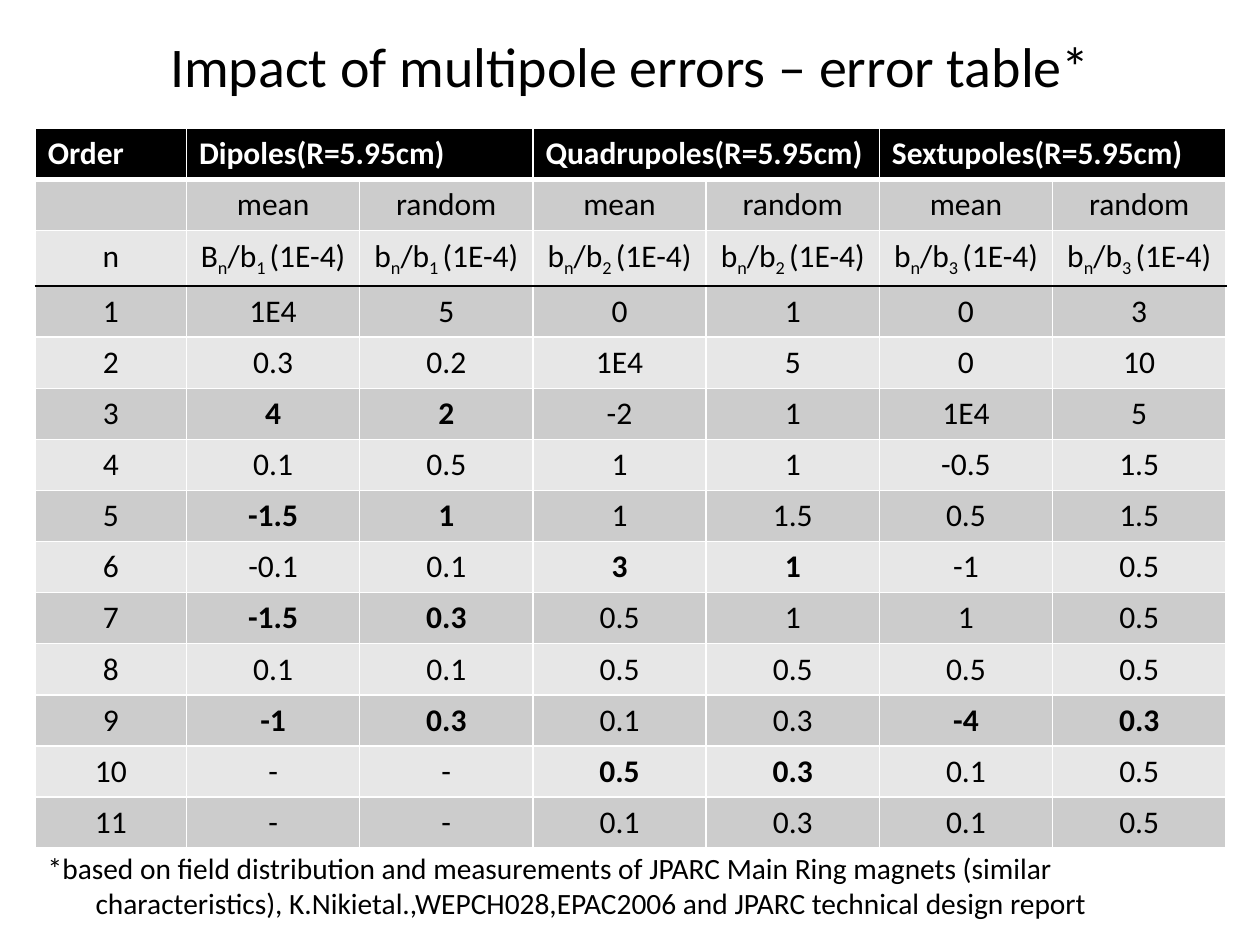
from lxml import etree
from pptx import Presentation
from pptx import util as u
from pptx.dml.color import RGBColor
from pptx.enum import text
from pptx.oxml.ns import qn

BLACK = RGBColor(0x00, 0x00, 0x00)
WHITE = RGBColor(0xFF, 0xFF, 0xFF)
DARK_BAND = RGBColor(0xCC, 0xCC, 0xCC)
LIGHT_BAND = RGBColor(0xE7, 0xE7, 0xE7)

# Shares of the slide's width and height
LEFT, WIDTH = 0.028, 0.945
TITLE_TOP, TITLE_HEIGHT = 0.015, 0.108
TABLE_TOP, TABLE_HEIGHT = 0.136, 0.757
NOTE_TOP, NOTE_HEIGHT = 0.893, 0.107
COLUMN_SHARES = [0.127] + [0.1455] * 6

TITLE = "Impact of multipole errors – error table*"
NOTE = ("*based on field distribution and measurements of JPARC Main Ring magnets "
        "(similar characteristics), K.Nikietal.,WEPCH028,EPAC2006 and JPARC "
        "technical design report")
MAGNETS = ["Dipoles", "Quadrupoles", "Sextupoles"]
UNIT_ROW = 2

# One line per order n, mean and random for each magnet; * marks a bold value
ERRORS = """
1E4 5 0 1 0 3
0.3 0.2 1E4 5 0 10
*4 *2 -2 1 1E4 5
0.1 0.5 1 1 -0.5 1.5
*-1.5 *1 1 1.5 0.5 1.5
-0.1 0.1 *3 *1 -1 0.5
*-1.5 *0.3 0.5 1 1 0.5
0.1 0.1 0.5 0.5 0.5 0.5
*-1 *0.3 0.1 0.3 *-4 *0.3
- - *0.5 *0.3 0.1 0.5
- - 0.1 0.3 0.1 0.5
"""


class SlideBuilder:
    font_name = "Calibri"

    def __init__(self, deck):
        self.deck = deck
        self.page = deck.slides.add_slide(deck.slide_layouts[5])

    def area(self, top, height):
        """Left, top, width and height of a full-width strip."""
        wide, high = self.deck.slide_width, self.deck.slide_height
        return (int(LEFT * wide), int(top * high),
                int(WIDTH * wide), int(height * high))

    def fill_paragraph(self, para, spans, size, color=BLACK, bold=False, align=None):
        """Fill a paragraph with (words, is_subscript) spans."""
        para.alignment = align
        font = para.font
        font.name, font.size, font.bold = self.font_name, u.Pt(size), bold
        font.color.rgb = color
        for words, is_subscript in spans:
            span = para.add_run()
            span.text = words
            if is_subscript:
                span.font._element.set("baseline", "-25000")

    def title(self, words):
        box = self.page.shapes.title
        box.left, box.top, box.width, box.height = self.area(TITLE_TOP, TITLE_HEIGHT)
        box.text_frame.vertical_anchor = text.MSO_ANCHOR.MIDDLE
        self.fill_paragraph(box.text_frame.paragraphs[0], [(words, False)], 32,
                            align=text.PP_ALIGN.CENTER)

    def footnote(self, words):
        box = self.page.shapes.add_textbox(*self.area(NOTE_TOP, NOTE_HEIGHT))
        box.text_frame.word_wrap = True
        para = box.text_frame.paragraphs[0]
        self.fill_paragraph(para, [(words, False)], 16.8)
        hanging = u.Inches(0.38)
        properties = para._p.get_or_add_pPr()
        properties.set("marL", str(hanging))
        properties.set("indent", str(-hanging))

    def table(self, rows):
        area = self.area(TABLE_TOP, TABLE_HEIGHT)
        grid = self.page.shapes.add_table(len(rows), len(COLUMN_SHARES), *area).table
        for column, share in zip(grid.columns, COLUMN_SHARES):
            column.width = int(share * area[2])
        for i, row in enumerate(rows):
            for j, (spans, bold) in enumerate(row):
                self.cell(grid.cell(i, j), i, spans, bold)
        for j in range(1, len(COLUMN_SHARES), 2):
            grid.cell(0, j).merge(grid.cell(0, j + 1))

    def cell(self, cell, row, spans, bold):
        is_header = row == 0
        cell.fill.solid()
        cell.fill.fore_color.rgb = (BLACK if is_header
                                    else DARK_BAND if row % 2 else LIGHT_BAND)
        self.fill_paragraph(cell.text_frame.paragraphs[0], spans, 18,
                            WHITE if is_header else BLACK, bold,
                            None if is_header else text.PP_ALIGN.CENTER)
        above = (BLACK if row == UNIT_ROW + 1 else WHITE, 3 if row == 1 else 1)
        below = (BLACK if row == UNIT_ROW else WHITE, 3 if is_header else 1)
        self.borders(cell, L=(WHITE, 1), R=(WHITE, 1), T=above, B=below)

    def borders(self, cell, **sides):
        properties = cell._tc.get_or_add_tcPr()
        for position, (side, (color, width)) in enumerate(sides.items()):
            line = etree.Element(qn(f"a:ln{side}"), w=str(u.Pt(width)))
            fill = etree.SubElement(line, qn("a:solidFill"))
            etree.SubElement(fill, qn("a:srgbClr"), val=str(color))
            properties.insert(position, line)


def plain(words, bold=False):
    return ([(words, False)] if words else [], bold)


def ratio(letter, main_order):
    """Heading of a multipole coefficient relative to the main one."""
    return ([(letter, False), ("n", True), ("/b", False),
             (f"{main_order} ", True), ("(1E-4)", False)], False)


def table_rows():
    header = [plain("Order", True)]
    kinds, units = [plain("")], [plain("n")]
    for order, magnet in enumerate(MAGNETS, 1):
        header += [plain(f"{magnet}(R=5.95cm)", True), plain("")]
        kinds += [plain("mean"), plain("random")]
        units += [ratio("B" if order == 1 else "b", order), ratio("b", order)]
    values = [[plain(str(n))] + [plain(value.lstrip("*"), value.startswith("*"))
                                 for value in line.split()]
              for n, line in enumerate(ERRORS.strip().splitlines(), 1)]
    return [header, kinds, units] + values


def main():
    deck = Presentation()
    deck.slide_width, deck.slide_height = u.Inches(10), u.Inches(7.5)
    builder = SlideBuilder(deck)
    builder.title(TITLE)
    builder.table(table_rows())
    builder.footnote(NOTE)
    deck.save("out.pptx")


if __name__ == "__main__":
    main()
